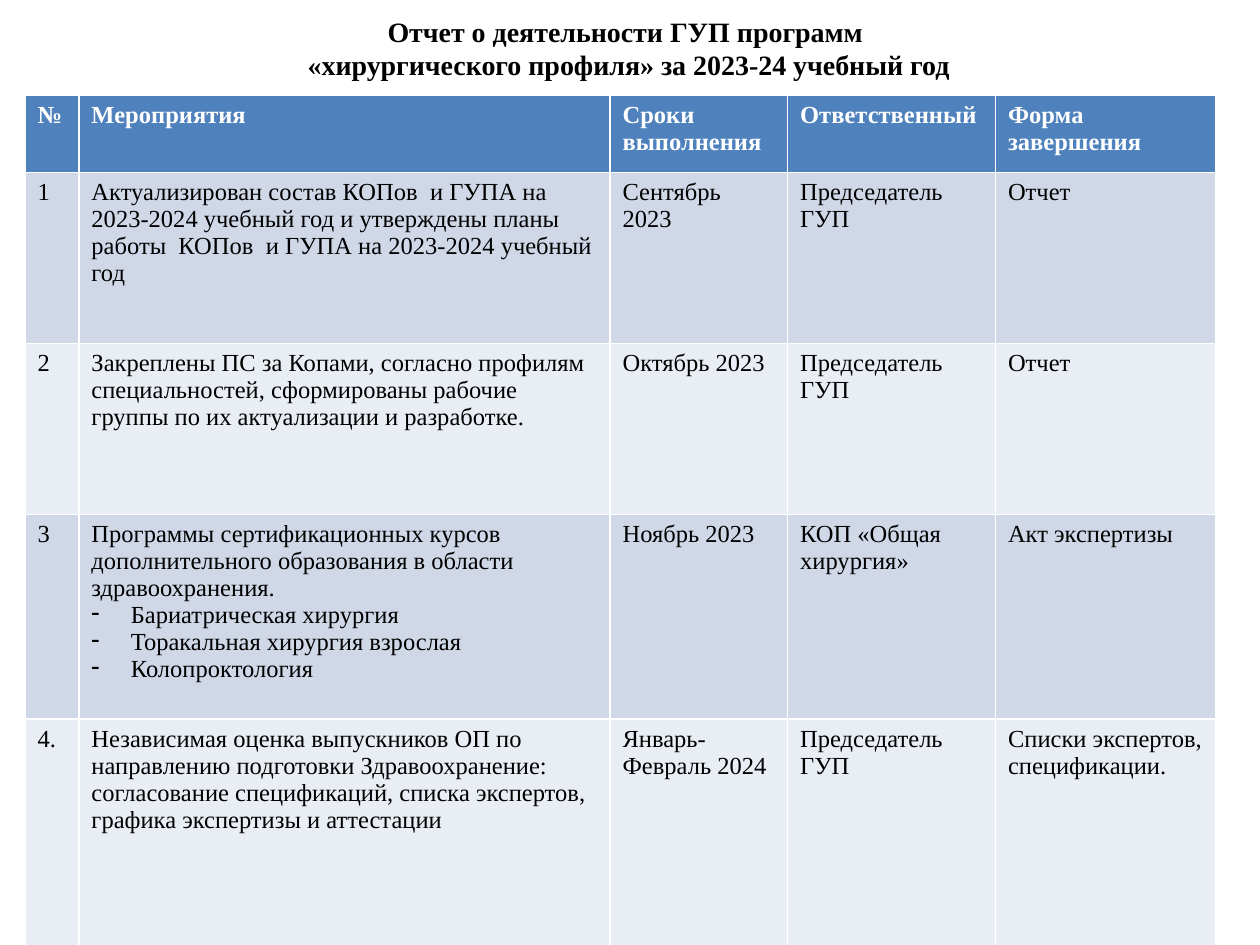
from dataclasses import dataclass

from lxml import etree
from pptx import Presentation
from pptx.dml.color import RGBColor
from pptx.enum.text import MSO_ANCHOR, PP_ALIGN
from pptx.oxml.ns import qn
from pptx.util import Pt

CENTER = PP_ALIGN.CENTER
MIDDLE = MSO_ANCHOR.MIDDLE


@dataclass(frozen=True)
class Theme:
    font: str = "Times New Roman"
    title_size: int = 16
    cell_size: int = 14
    dark: str = "000000"
    light: str = "FFFFFF"
    header: str = "4F81BD"
    bands: tuple = ("D0D8E8", "E9EDF4")


theme = Theme()


def set_font(p, size, color, bold):
    p.font.name = theme.font
    p.font.size = Pt(size)
    p.font.bold = bold
    p.font.color.rgb = RGBColor.from_string(color)


def add_dash(p):
    pPr = p._p.get_or_add_pPr()
    pPr.set("marL", str(Pt(22.5)))
    pPr.set("indent", str(Pt(-22.5)))
    bullet = etree.Element(qn("a:buChar"), char="-")
    pPr.insert(0, bullet)


TITLE = "Отчет о деятельности ГУП программ \n«хирургического профиля» за 2023-24 учебный год"
COURSES = ["Бариатрическая хирургия", "Торакальная хирургия взрослая", "Колопроктология"]
ROWS = [
    ["№", "Мероприятия", "Сроки выполнения", "Ответственный", "Форма завершения"],
    ["1", "Актуализирован состав КОПов  и ГУПА на 2023-2024 учебный год и утверждены планы  "
          "работы  КОПов  и ГУПА на 2023-2024 учебный год",
     "Сентябрь 2023", "Председатель ГУП", "Отчет"],
    ["2", "Закреплены ПС за Копами, согласно профилям специальностей, сформированы рабочие "
          "группы по их актуализации и разработке.",
     "Октябрь 2023", "Председатель ГУП", "Отчет"],
    ["3", "Программы сертификационных курсов дополнительного образования в области "
          "здравоохранения.",
     "Ноябрь 2023", "КОП «Общая хирургия»", "Акт экспертизы"],
    ["4.", "Независимая оценка выпускников ОП по направлению подготовки Здравоохранение: "
           "согласование спецификаций, списка экспертов, графика экспертизы и аттестации",
     "Январь-Февраль 2024", "Председатель ГУП", "Списки экспертов, спецификации."],
]
COL_WIDTHS = [30.8, 303.5, 101.5, 118.8, 126]
ROW_HEIGHTS = [43.9, 97.7, 97.7, 116.9, 157]

prs = Presentation()
prs.slide_width, prs.slide_height = Pt(720), Pt(540)
s = prs.slides.add_slide(prs.slide_layouts[5])

title = s.shapes.title
title.left, title.top, title.width, title.height = Pt(35.3), Pt(0), Pt(648), Pt(54.7)
tf = title.text_frame
tf.vertical_anchor = MIDDLE
p = tf.paragraphs[0]
p.text = TITLE
p.alignment = CENTER
set_font(p, theme.title_size, theme.dark, True)

table = s.shapes.add_table(len(ROWS), len(COL_WIDTHS), Pt(14.3), Pt(54.7),
                           Pt(sum(COL_WIDTHS)), Pt(sum(ROW_HEIGHTS))).table
for column, width in zip(table.columns, COL_WIDTHS):
    column.width = Pt(width)
for row, height in zip(table.rows, ROW_HEIGHTS):
    row.height = Pt(height)

for i, texts in enumerate(ROWS):
    is_header = i == 0
    fill = theme.header if is_header else theme.bands[(i - 1) % 2]
    color = theme.light if is_header else theme.dark
    for j, text in enumerate(texts):
        cell = table.cell(i, j)
        cell.fill.solid()
        cell.fill.fore_color.rgb = RGBColor.from_string(fill)
        p = cell.text_frame.paragraphs[0]
        p.text = text
        set_font(p, theme.cell_size, color, is_header)

tf = table.cell(3, 1).text_frame
for course in COURSES:
    p = tf.add_paragraph()
    p.text = course
    add_dash(p)
    set_font(p, theme.cell_size, theme.dark, False)

prs.save("out.pptx")
